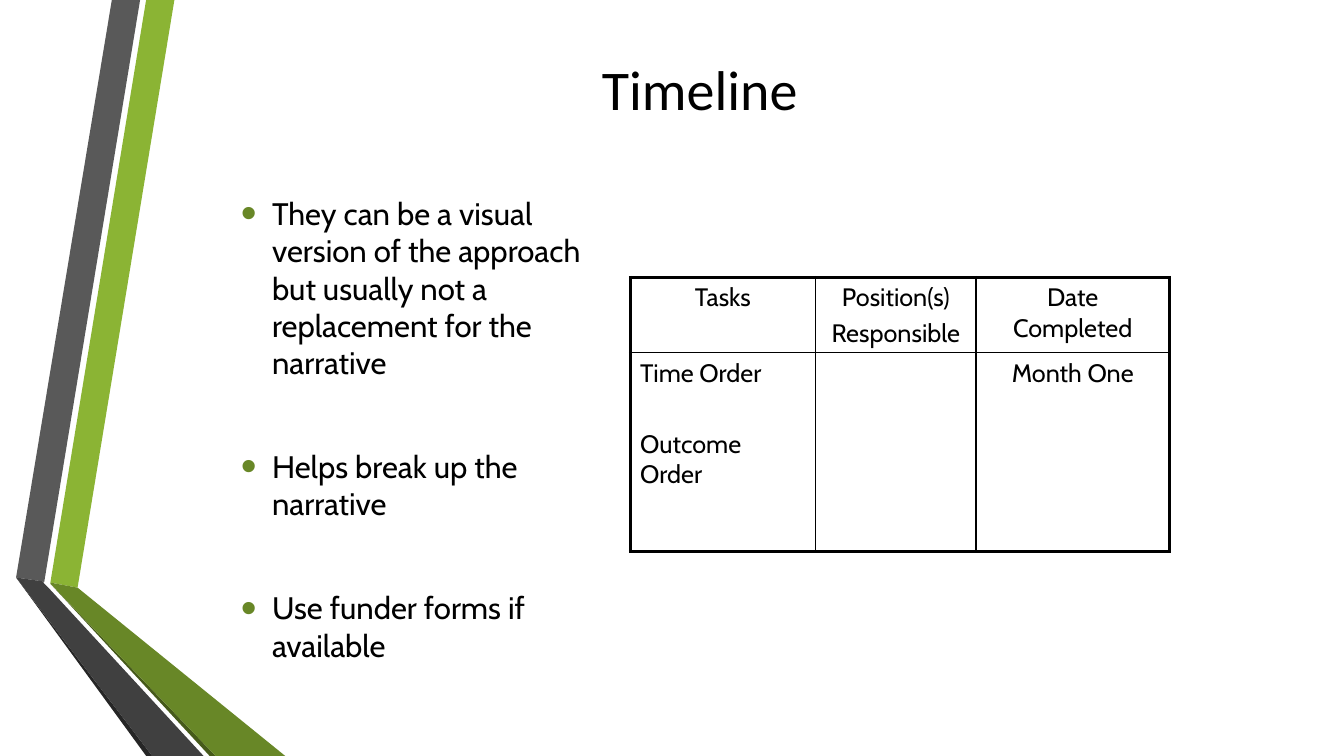
"""Build the Timeline slide: folded ribbons, three bullets and a task table."""
from lxml.etree import SubElement
from pptx import Presentation
from pptx.dml.color import RGBColor as RGB
from pptx.enum.text import MSO_ANCHOR as Anchor, PP_ALIGN as Align
from pptx.oxml import parse_xml
from pptx.oxml.ns import nsdecls, qn
from pptx.util import Pt

PX = 9144
HUES = {"lime": "8BB434", "gray": "595959", "black": "000000", "soot": "262626",
        "moss": "465A1A", "green": "688727", "coal": "404040"}

deck = Presentation()
deck.slide_width, deck.slide_height = 1333 * PX, 750 * PX
slide = deck.slides.add_slide(deck.slide_layouts[6])


def style(para, face, size, before=0, after=0, align=Align.LEFT):
    para.font.name, para.font.size = face, Pt(size)
    para.font.color.rgb = RGB.from_string(HUES["black"])
    para.space_before, para.space_after = Pt(before), Pt(after)
    para.alignment = align


def add_box(x, y, w, h):
    frame = slide.shapes.add_textbox(x * PX, y * PX, w * PX, h * PX).text_frame
    frame.word_wrap = True
    frame.vertical_anchor = Anchor.MIDDLE
    return frame


ribbons = [
    ("lime", [(50, 578), (77, 583), (173, 0), (145, 0)]),
    ("gray", [(139, 0), (111, 0), (16, 573), (44, 577)]),
    ("soot", [(16, 573), (145, 750), (151, 750)]),
    ("moss", [(50, 579), (208, 750), (214, 750)]),
    ("green", [(50, 579), (214, 750), (283, 750), (77, 583), (50, 578)]),
    ("coal", [(202, 750), (48, 583), (43, 578), (44, 577), (16, 573), (151, 750)]),
]
for hue, points in ribbons:
    path = slide.shapes.build_freeform(*points[0], scale=PX)
    path.add_line_segments(points[1:], close=True)
    shape = path.convert_to_shape()
    shape.shadow.inherit = False
    shape.fill.solid()
    shape.fill.fore_color.rgb = RGB.from_string(HUES[hue])
    shape.line.fill.background()

title = add_box(244, 25, 900, 125).paragraphs[0]
title.text = "Timeline"
style(title, "Calibri", 40, align=Align.CENTER)

points = ["They can be a visual version of the approach but usually not a replacement for the narrative",
          "Helps break up the narrative", "Use funder forms if available"]
body = add_box(229, 192, 380, 467)
for i, text in enumerate(points):
    para = body.paragraphs[0] if i == 0 else body.add_paragraph()
    para.text = text
    style(para, "Cabin", 22.2, before=41.6 if i else 0, after=6)
    props = para._p.get_or_add_pPr()
    props.set("marL", str(31 * PX))
    props.set("indent", str(-31 * PX))
    tint = SubElement(props, qn("a:buClr"))
    SubElement(tint, qn("a:srgbClr"), val=HUES["green"])
    SubElement(props, qn("a:buSzPct"), val="145000")
    SubElement(props, qn("a:buFont"), typeface="Arial")
    SubElement(props, qn("a:buChar"), char="•")

widths, heights = [184, 159, 192], [75, 197]
rows = [[["Tasks"], ["Position(s)", "Responsible"], ["Date Completed"]],
        [["Time Order", "Outcome Order"], [], ["Month One"]]]
table = slide.shapes.add_table(2, 3, 625 * PX, 275 * PX, sum(widths) * PX, sum(heights) * PX).table
table.first_row = table.horz_banding = False
for c, width in enumerate(widths):
    table.columns[c].width = width * PX
for r, height in enumerate(heights):
    table.rows[r].height = height * PX
    for c, lines in enumerate(rows[r]):
        cell = table.cell(r, c)
        cell.fill.background()
        left = (r, c) == (1, 0)
        for i, text in enumerate(lines):
            para = cell.text_frame.paragraphs[0] if i == 0 else cell.text_frame.add_paragraph()
            para.text = text
            gap = 28.6 if left else 3.6
            style(para, "Cabin", 18, before=gap if i else 0, align=Align.LEFT if left else Align.CENTER)
        outer = {"L": c == 0, "R": c == 2, "T": r == 0, "B": r == 1}
        for i, (side, edge) in enumerate(outer.items()):
            line = parse_xml(f'<a:ln{side} {nsdecls("a")} w="{Pt(2.25 if edge else 1)}"><a:solidFill>'
                             f'<a:srgbClr val="{HUES["black"]}"/></a:solidFill></a:ln{side}>')
            cell._tc.get_or_add_tcPr().insert(i, line)

deck.save("out.pptx")
